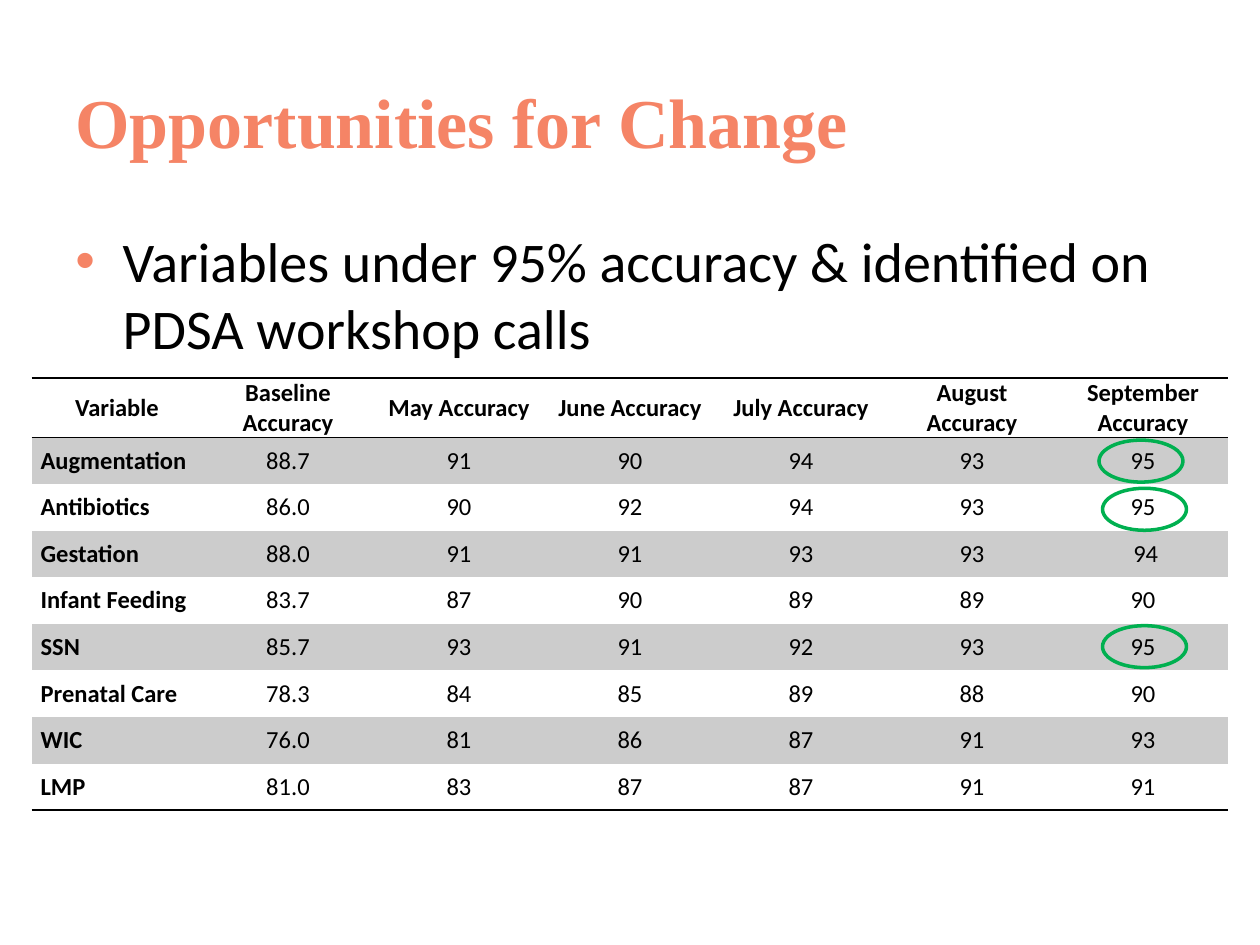
"""Build the Opportunities for Change slide with its monthly accuracy table."""
from lxml import etree
from pptx import Presentation
from pptx.dml.color import RGBColor
from pptx.enum.shapes import MSO_SHAPE
from pptx.enum.text import MSO_ANCHOR, PP_ALIGN
from pptx.oxml.ns import qn
from pptx.util import Pt

OVAL = MSO_SHAPE.OVAL
MIDDLE = MSO_ANCHOR.MIDDLE
LEFT, CENTER = PP_ALIGN.LEFT, PP_ALIGN.CENTER
PLAIN = "{2D5ABB26-0587-4C30-8999-92F81FD0307C}"
COLORS = {"coral": "F58466", "text": "000000", "band": "CCCCCC", "ring": "00B050"}

HEADS = ["Variable"] + [
    f"{when} Accuracy" for when in ("Baseline", "May", "June", "July", "August", "September")]
ROWS = [
    HEADS,
    ["Augmentation", "88.7", "91", "90", "94", "93", "95"],
    ["Antibiotics", "86.0", "90", "92", "94", "93", "95"],
    ["Gestation", "88.0", "91", "91", "93", "93", " 94"],
    ["Infant Feeding", "83.7", "87", "90", "89", "89", "90"],
    ["SSN", "85.7", "93", "91", "92", "93", "95"],
    ["Prenatal Care", "78.3", "84", "85", "89", "88", "90"],
    ["WIC", "76.0", "81", "86", "87", "91", "93"],
    ["LMP", "81.0", "83", "87", "87", "91", "91"],
]
RINGS = [(628, 251.5), (630, 279), (630, 357.5)]


def style(para, font, size, color, bold=False):
    for run in para.runs:
        run.font.name = font
        run.font.size = Pt(size)
        run.font.bold = bold
        run.font.color.rgb = RGBColor.from_string(COLORS[color])


def border(cell, side):
    line = etree.SubElement(cell._tc.get_or_add_tcPr(), qn(f"a:{side}"), w=str(Pt(1)))
    fill = etree.SubElement(line, qn("a:solidFill"))
    etree.SubElement(fill, qn("a:srgbClr"), val=COLORS["text"])


deck = Presentation()
deck.slide_width, deck.slide_height = Pt(720), Pt(540)
slide = deck.slides.add_slide(deck.slide_layouts[5])
shapes = slide.shapes

title = shapes.title
title.left, title.top, title.width, title.height = Pt(36), Pt(24), Pt(648), Pt(90)
title.text_frame.text = "Opportunities for Change"
title.text_frame.vertical_anchor = MIDDLE
para = title.text_frame.paragraphs[0]
para.alignment = LEFT
style(para, "Times New Roman", 40, "coral", True)

body = shapes.add_textbox(Pt(36), Pt(126), Pt(648), Pt(356.4))
body.text_frame.word_wrap = True
para = body.text_frame.paragraphs[0]
para.text = "Variables under 95% accuracy & identified on PDSA workshop calls"
para.space_before = Pt(6.4)
style(para, "Calibri", 32, "text")
props = para._p.get_or_add_pPr()
props.set("marL", str(Pt(27)))
props.set("indent", str(-Pt(27)))
tint = etree.SubElement(props, qn("a:buClr"))
etree.SubElement(tint, qn("a:srgbClr"), val=COLORS["coral"])
etree.SubElement(props, qn("a:buFont"), typeface="Arial")
etree.SubElement(props, qn("a:buChar"), char="•")

frame = shapes.add_table(len(ROWS), len(HEADS), Pt(18), Pt(216), Pt(684), Pt(247))
table = frame.table
table.horz_banding = False
table._tbl.tblPr.find(qn("a:tableStyleId")).text = PLAIN
for col in table.columns:
    col.width = Pt(684 / len(HEADS))
for r, values in enumerate(ROWS):
    table.rows[r].height = Pt(34 if r == 0 else 26.63)
    for c, value in enumerate(values):
        cell = table.cell(r, c)
        cell.text = value
        cell.vertical_anchor = MIDDLE
        cell.margin_left = cell.margin_right = Pt(5.2)
        cell.margin_top = cell.margin_bottom = 0
        para = cell.text_frame.paragraphs[0]
        para.alignment = LEFT if r and c == 0 else CENTER
        style(para, "Calibri", 14, "text", r == 0 or c == 0)
        if r == 0:
            border(cell, "lnT")
        if r in (0, len(ROWS) - 1):
            border(cell, "lnB")
        if r % 2:
            cell.fill.solid()
            cell.fill.fore_color.rgb = RGBColor.from_string(COLORS["band"])
        else:
            cell.fill.background()

for left, top in RINGS:
    ring = shapes.add_shape(OVAL, Pt(left), Pt(top), Pt(48), Pt(24))
    ring.shadow.inherit = False
    ring.fill.background()
    ring.line.width = Pt(2)
    ring.line.color.rgb = RGBColor.from_string(COLORS["ring"])

deck.save("out.pptx")
